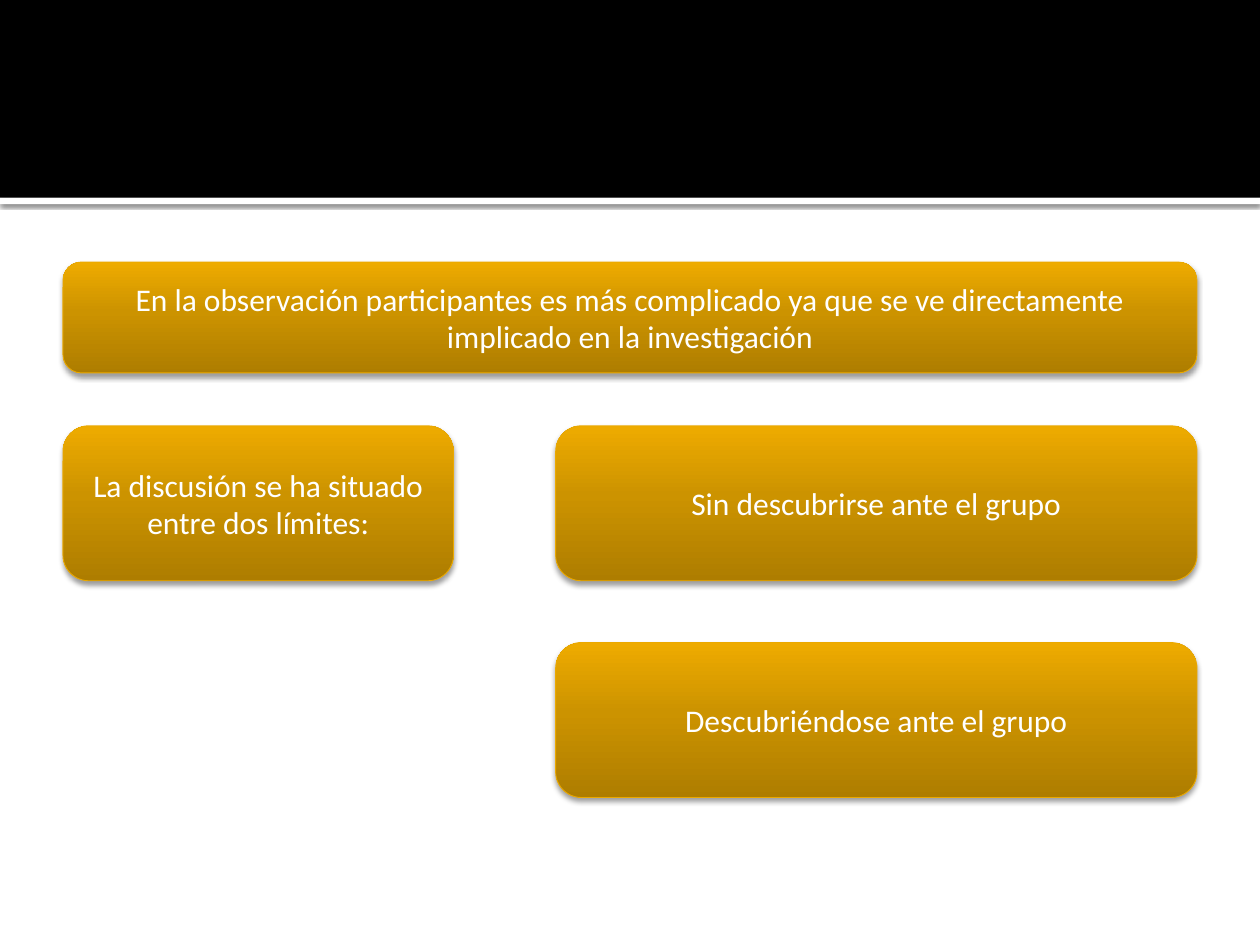
import pptx
import pptx.util
import pptx.oxml
import pptx.oxml.ns
import pptx.dml.color
import pptx.enum.shapes
import pptx.enum.text

Inches = pptx.util.Inches
Pt = pptx.util.Pt
KIND = pptx.enum.shapes.MSO_SHAPE
NS = pptx.oxml.ns.nsdecls("a")

HUES = {"black": "000000", "white": "FFFFFF", "edge": "EBA900",
        "dark": "AE7D00", "mid": "CC9300", "light": "EEAB00"}
STOPS = [(0, "dark"), (55, "mid"), (100, "light")]
FONT = {"name": "Calibri", "size": Pt(18)}
FRAME = {"word_wrap": True, "vertical_anchor": pptx.enum.text.MSO_ANCHOR.MIDDLE}


def tint(name):
    return pptx.dml.color.RGBColor.from_string(HUES[name])


def apply(item, vals):
    for key, val in vals.items():
        setattr(item, key, val)


class Deck:
    def __init__(self, wide, high):
        self.prs = pptx.Presentation()
        apply(self.prs, {"slide_width": Inches(wide), "slide_height": Inches(high)})
        self.slide = self.prs.slides.add_slide(self.prs.slide_layouts[6])

    def shape(self, kind, spot):
        shape = self.slide.shapes.add_shape(kind, *map(Inches, spot))
        shape.shadow.inherit = False
        return shape

    def shade(self, shape, alpha, blur, dist):
        glow = pptx.oxml.parse_xml(
            f'<a:outerShdw {NS} blurRad="{Pt(blur)}" dist="{Pt(dist)}" dir="5400000" '
            f'algn="t" rotWithShape="0"><a:srgbClr val="{HUES["black"]}">'
            f'<a:alpha val="{alpha * 1000}"/></a:srgbClr></a:outerShdw>')
        shape._element.spPr.find(pptx.oxml.ns.qn("a:effectLst")).append(glow)

    def band(self, top, high, hue):
        shape = self.shape(KIND.RECTANGLE, (0, top, 10, high))
        shape.fill.solid()
        shape.fill.fore_color.rgb = tint(hue)
        shape.line.fill.background()
        return shape

    def blend(self, shape):
        shape.fill.gradient()
        shape.fill.gradient_angle = 90
        stops = "".join(f'<a:gs pos="{pos * 1000}"><a:srgbClr val="{HUES[hue]}"/></a:gs>'
                        for pos, hue in STOPS)
        old = shape._element.spPr.find(".//" + pptx.oxml.ns.qn("a:gsLst"))
        new = pptx.oxml.parse_xml(f"<a:gsLst {NS}>{stops}</a:gsLst>")
        old.getparent().replace(old, new)

    def card(self, spot, text):
        shape = self.shape(KIND.ROUNDED_RECTANGLE, spot)
        self.blend(shape)
        shape.line.color.rgb = tint("edge")
        shape.line.width = Pt(0.5)
        self.shade(shape, 38, 3.1, 2)
        apply(shape.text_frame, FRAME)
        para = shape.text_frame.paragraphs[0]
        para.alignment = pptx.enum.text.PP_ALIGN.CENTER
        run = para.add_run()
        run.text = text
        apply(run.font, FONT)
        run.font.color.rgb = tint("white")


def main():
    deck = Deck(10, 7.5)

    # Header: white rule with a shadow, then the black band
    rule = deck.band(1.57, 0.05, "white")
    deck.shade(rule, 60, 2.5, 0.8)
    deck.band(0, 1.57, "black")

    # Main statement
    left, right, top, high = 0.5, 4.41, 3.38, 1.23
    deck.card((left, 2.08, 9, 0.88),
              "En la observación participantes es más complicado ya que se ve "
              "directamente implicado en la investigación")

    # Question and its two limits
    deck.card((left, top, 3.1, high), "La discusión se ha situado entre dos límites:")
    limits = ["Sin descubrirse ante el grupo", "Descubriéndose ante el grupo"]
    for row, text in enumerate(limits):
        deck.card((right, top + row * 1.72, 5.09, high), text)

    deck.prs.save("out.pptx")


if __name__ == "__main__":
    main()
